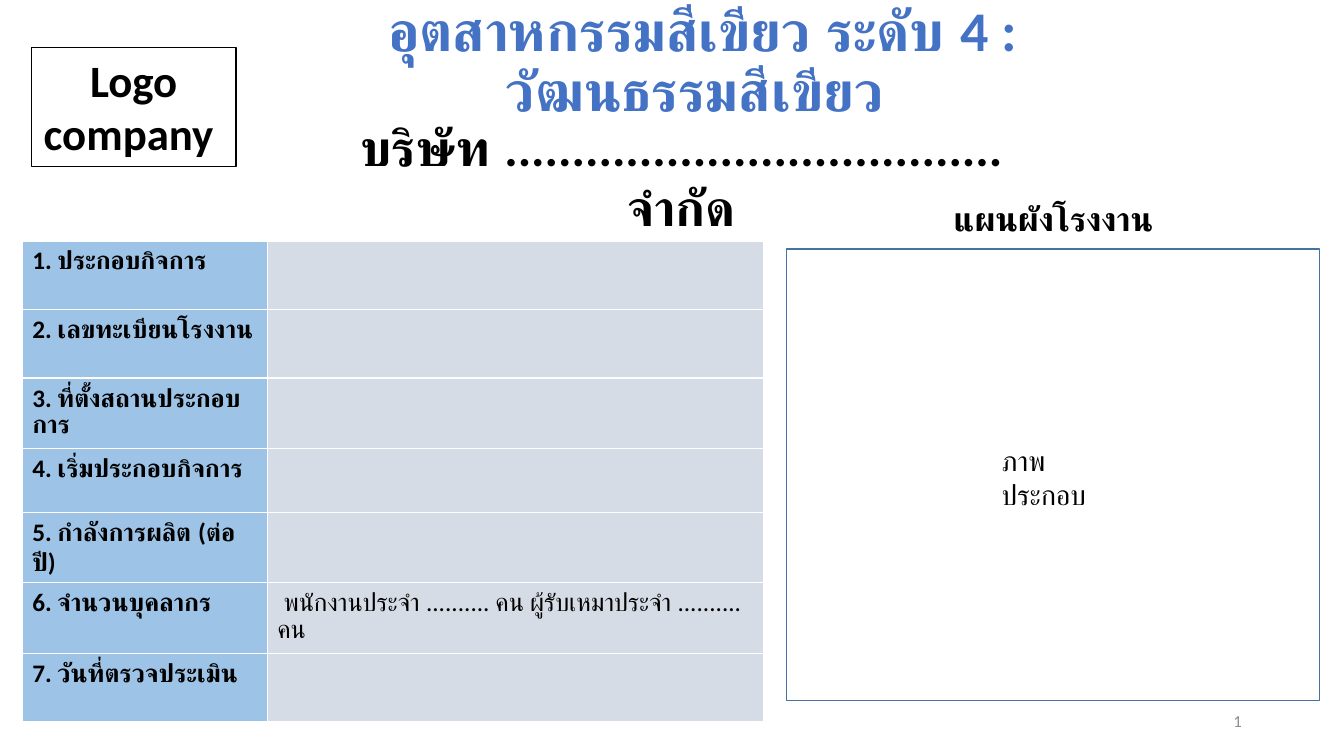
import pptx
import pptx.util
import pptx.dml.color
import pptx.enum.shapes
import pptx.enum.text

WIDE, HIGH = 13.33, 7.5
HUES = {
    "black": "000000", "white": "FFFFFF", "blue": "4472C4", "edge": "43739E",
    "label": "9DC3E6", "value": "D6DCE5", "gray": "8C8C8C",
}
ALIGN = pptx.enum.text.PP_ALIGN
ANCHOR = pptx.enum.text.MSO_ANCHOR
FIT = pptx.enum.text.MSO_AUTO_SIZE
ROWS = [
    ("1. ประกอบกิจการ", "", 9.07),
    ("2. เลขทะเบียนโรงงาน", "", 9.07),
    ("3. ที่ตั้งสถานประกอบการ", "", 9.07),
    ("4. เริ่มประกอบกิจการ", "", 8.4),
    ("5. กำลังการผลิต (ต่อปี)", "", 9.07),
    ("6. จำนวนบุคลากร", " พนักงานประจำ .......... คน ผู้รับเหมาประจำ .......... คน", 8.67),
    ("7. วันที่ตรวจประเมิน", "", 9.07),
]


def across(share):
    return pptx.util.Inches(WIDE * share / 100)


def down(share):
    return pptx.util.Inches(HIGH * share / 100)


def place(left, top, width, height):
    return across(left), down(top), across(width), down(height)


def color(name):
    return pptx.dml.color.RGBColor.from_string(HUES[name])


def paint(item, name):
    item.fill.solid()
    item.fill.fore_color.rgb = color(name)


def apply(item, values):
    for name, value in values.items():
        setattr(item, name, value)


def write(frame, text, size, hue="black", bold=False, para=None, body=None):
    apply(frame, {"word_wrap": True, "auto_size": FIT.NONE, **(body or {})})
    line = frame.paragraphs[0]
    apply(line, para or {})
    run = line.add_run()
    run.text = text
    apply(run.font, {"name": "Calibri", "size": pptx.util.Pt(size), "bold": bold})
    run.font.color.rgb = color(hue)


def add_text(slide, area, text, size, **style):
    box = slide.shapes.add_textbox(*place(*area))
    write(box.text_frame, text, size, **style)


def add_box(slide, area, fill=None, edge=None):
    kind = pptx.enum.shapes.MSO_SHAPE.RECTANGLE
    box = slide.shapes.add_shape(kind, *place(*area))
    box.shadow.inherit = False
    if fill:
        paint(box, fill)
    else:
        box.fill.background()
    if edge:
        box.line.color.rgb = color(edge)
        box.line.width = pptx.util.Pt(1)
    else:
        box.line.fill.background()
    return box


def add_title(slide, area, text, size, **style):
    title = slide.shapes.title
    apply(title, dict(zip(("left", "top", "width", "height"), place(*area))))
    write(title.text_frame, text, size, **style)
    title.element.getparent().append(title.element)


def add_facts(slide, area, widths):
    table = slide.shapes.add_table(len(ROWS), len(widths), *place(*area)).table
    apply(table, {"first_row": False, "horz_banding": False})
    for col, width in zip(table.columns, widths):
        col.width = across(width)
    for index, (label, value, height) in enumerate(ROWS):
        table.rows[index].height = down(height)
        for col, (text, fill) in enumerate([(label, "label"), (value, "value")]):
            cell = table.cell(index, col)
            paint(cell, fill)
            if text:
                write(cell.text_frame, text, 18, bold=col == 0)


def main():
    deck = pptx.Presentation()
    apply(deck, {"slide_width": across(100), "slide_height": down(100)})
    slide = deck.slides.add_slide(deck.slide_layouts[5])
    mid = {"alignment": ALIGN.CENTER}
    head = {"alignment": ALIGN.CENTER, "line_spacing": 0.9}
    high = {"vertical_anchor": ANCHOR.TOP, "auto_size": FIT.SHAPE_TO_FIT_TEXT}
    even = {"vertical_anchor": ANCHOR.MIDDLE}

    firm = add_box(slide, (25.28, 14.67, 50.85, 9.47), "white")
    write(firm.text_frame, "บริษัท .....................................จำกัด", 36,
          bold=True, para=mid, body=high)
    add_text(slide, (70.65, 92.67, 22.5, 5.33), "1", 12, hue="gray",
             para={"alignment": ALIGN.RIGHT}, body=even)
    logo = add_box(slide, (2.33, 6.27, 15.23, 15.73), "white", "black")
    write(logo.text_frame, "Logo company ", 32, bold=True, para=mid, body=high)
    add_facts(slide, (1.65, 31.87, 55.13, 62.8), (18.23, 36.9))
    add_box(slide, (58.5, 32.93, 39.68, 59.73), edge="edge")
    add_text(slide, (66.83, 23.47, 23.1, 11.47), "แผนผังโรงงาน", 24,
             bold=True, para=head, body=even)
    add_title(slide, (21.6, 2.67, 61.35, 11.47),
              "อุตสาหกรรมสีเขียว ระดับ 4 : วัฒนธรรมสีเขียว ", 40,
              hue="blue", bold=True, para=head, body=even)
    add_text(slide, (73.8, 58, 9.08, 5.87), "ภาพประกอบ", 20, body=high)
    deck.save("out.pptx")


if __name__ == "__main__":
    main()
